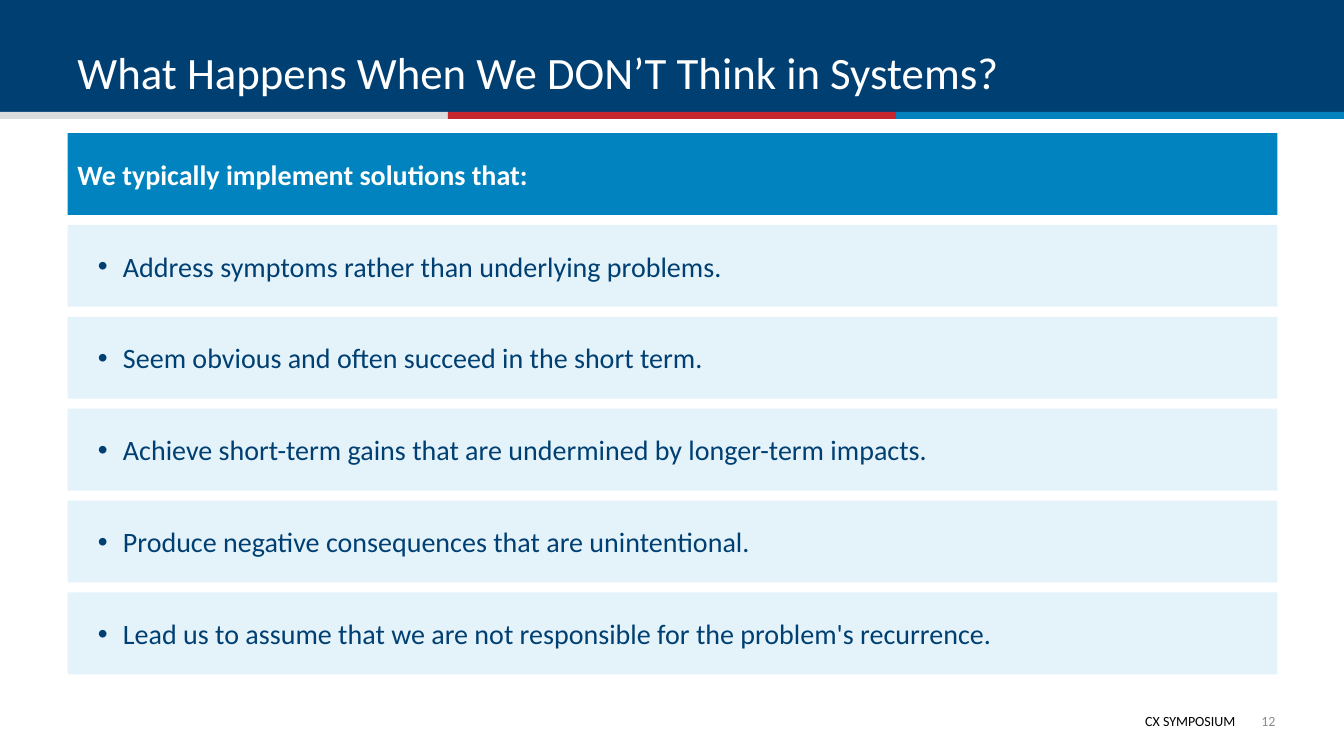
import pptx
import pptx.dml.color
import pptx.enum.shapes
import pptx.enum.text
import pptx.oxml.ns
import pptx.util
from lxml import etree
from pptx.util import Inches

ANCHOR = pptx.enum.text.MSO_ANCHOR
ALIGN = pptx.enum.text.PP_ALIGN

SLIDE_W, SLIDE_H = 13.33, 7.5
MARGIN = 0.67
NAVY, WHITE = "003F72", "FFFFFF"
STRIPE_COLORS = ["DBDCDE", "C6262D", "0082BD"]
LEAD_IN = "We typically implement solutions that:"
EFFECTS = [
    "Address symptoms rather than underlying problems.",
    "Seem obvious and often succeed in the short term.",
    "Achieve short-term gains that are undermined by longer-term impacts.",
    "Produce negative consequences that are unintentional.",
    "Lead us to assume that we are not responsible for the problem's recurrence.",
]


def rgb(color):
    return pptx.dml.color.RGBColor.from_string(color)


def add_bar(slide, left, top, width, height, color):
    bar = slide.shapes.add_shape(
        pptx.enum.shapes.MSO_SHAPE.RECTANGLE,
        Inches(left), Inches(top), Inches(width), Inches(height))
    bar.shadow.inherit = False
    bar.fill.solid()
    bar.fill.fore_color.rgb = rgb(color)
    bar.line.fill.background()
    return bar


def add_text_box(slide, left, top, width, height):
    return slide.shapes.add_textbox(
        Inches(left), Inches(top), Inches(width), Inches(height))


def add_bullet(paragraph, indent):
    properties = paragraph._p.get_or_add_pPr()
    properties.set("marL", str(Inches(indent)))
    properties.set("indent", str(-Inches(indent)))
    for tag, attribute, value in (("a:buFont", "typeface", "Arial"),
                                  ("a:buChar", "char", "•")):
        element = etree.SubElement(properties, pptx.oxml.ns.qn(tag))
        element.set(attribute, value)


def write(shape, text, size, color, bold=False, align=ALIGN.LEFT,
          anchor=ANCHOR.MIDDLE, insets=(0.1, 0.05, 0.1, 0.05), bullet=False):
    """Fill a shape with one paragraph; insets are left, top, right, bottom."""
    frame = shape.text_frame
    frame.word_wrap = True
    frame.vertical_anchor = anchor
    (frame.margin_left, frame.margin_top,
     frame.margin_right, frame.margin_bottom) = map(Inches, insets)
    paragraph = frame.paragraphs[0]
    paragraph.alignment = align
    if bullet:
        add_bullet(paragraph, 0.25)
    run = paragraph.add_run()
    run.text = text
    run.font.name = "Calibri"
    run.font.size = pptx.util.Pt(size)
    run.font.bold = bold
    run.font.color.rgb = rgb(color)


def add_header(slide, left, top, width, height):
    """Title band with a three-colour stripe along its lower edge."""
    add_bar(slide, left, top, width, height, NAVY)
    stripe_w = width / len(STRIPE_COLORS)
    for i, color in enumerate(STRIPE_COLORS):
        add_bar(slide, left + i * stripe_w, top + height - 0.03,
                stripe_w, 0.07, color)
    title = add_text_box(slide, left + MARGIN, top + 0.14,
                         width - 2 * MARGIN, 0.89)
    write(title, "What Happens When We DON’T Think in Systems?", 32, WHITE,
          anchor=ANCHOR.BOTTOM)


def add_effect_rows(slide, left, top, width, height, gap=0.1):
    """Lead-in row and one bulleted row per effect, evenly stacked."""
    row_h = (height - gap * len(EFFECTS)) / (len(EFFECTS) + 1)
    lead_in = add_bar(slide, left, top, width, row_h, "0083BE")
    write(lead_in, LEAD_IN, 20, WHITE, bold=True)
    for i, effect in enumerate(EFFECTS, start=1):
        row = add_bar(slide, left, top + i * (row_h + gap), width, row_h,
                      "E4F2F9")
        write(row, effect, 20, NAVY, insets=(0.3, 0.05, 0.1, 0.05),
              bullet=True)


def add_footer(slide, left, top, width, height):
    event = add_text_box(slide, left, top + 0.07, width - 0.3, 0.27)
    write(event, "CX SYMPOSIUM", 10, "000000", align=ALIGN.RIGHT,
          anchor=ANCHOR.TOP)
    number = add_text_box(slide, left + width - 0.36, top, 0.36, height)
    write(number, "12", 10, "8C8C8C", align=ALIGN.RIGHT, insets=(0, 0, 0, 0))


def main():
    deck = pptx.Presentation()
    deck.slide_width, deck.slide_height = Inches(SLIDE_W), Inches(SLIDE_H)
    slide = deck.slides.add_slide(deck.slide_layouts[6])
    add_header(slide, 0, 0, SLIDE_W, 1.14)
    add_effect_rows(slide, MARGIN, 1.32, 12, 5.37)
    add_footer(slide, 5.51, 6.95, 7.14, 0.4)
    deck.save("out.pptx")


if __name__ == "__main__":
    main()
